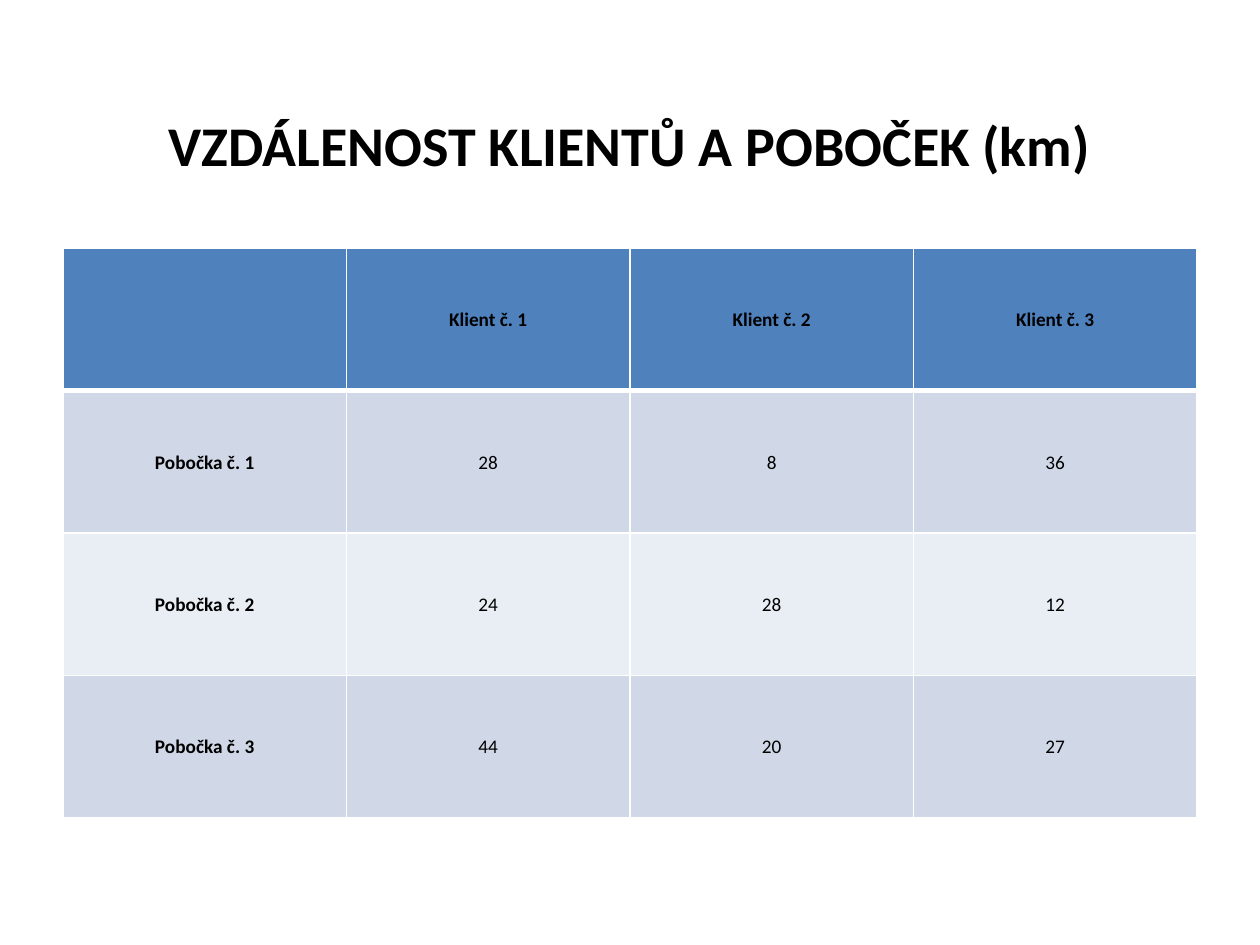
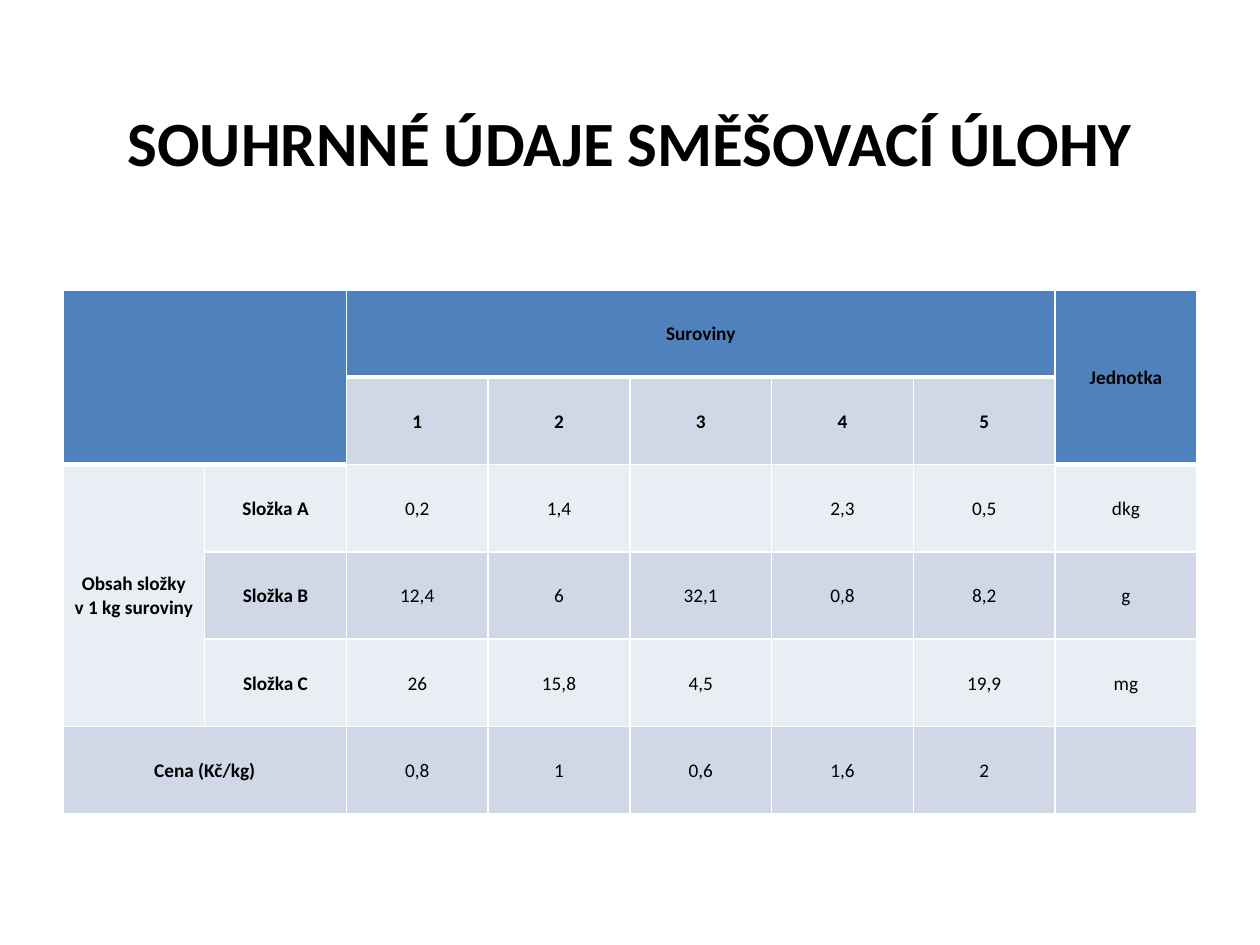
from dataclasses import dataclass

from lxml.etree import SubElement
from pptx import Presentation
from pptx.dml.color import RGBColor as Rgb
from pptx.enum.text import MSO_ANCHOR as Anchor, PP_ALIGN as Align
from pptx.oxml.ns import qn
from pptx.util import Inches, Pt


@dataclass(frozen=True)
class Theme:
    font: str = "Calibri"
    ink: str = "000000"
    line: str = "FFFFFF"
    head: str = "4F81BD"
    bands: tuple = ("E9EDF4", "D0D8E8")
    text: int = 11
    thin: int = 1
    thick: int = 3
    left: float = 0.5
    width: float = 9


class Deck:
    def __init__(self, theme):
        self.theme = theme
        self.prs = Presentation()
        self.prs.slide_width = Inches(10)
        self.prs.slide_height = Inches(7.5)
        self.slide = None

    def page(self):
        self.slide = self.prs.slides.add_slide(self.prs.slide_layouts[6])

    def style(self, para, size, bold):
        para.alignment = Align.CENTER
        font = para.font
        font.name, font.size, font.bold = self.theme.font, Pt(size), bold
        font.color.rgb = Rgb.from_string(self.theme.ink)

    def title(self, text, top, height, size):
        box = self.slide.shapes.add_textbox(
            Inches(self.theme.left), Inches(top),
            Inches(self.theme.width), Inches(height))
        frame = box.text_frame
        frame.word_wrap = True
        frame.vertical_anchor = Anchor.MIDDLE
        frame.text = text
        self.style(frame.paragraphs[0], size, True)

    def edge(self, cell, side, width):
        line = SubElement(cell._tc.get_or_add_tcPr(), qn(f"a:ln{side}"),
                          w=str(Pt(width)))
        fill = SubElement(line, qn("a:solidFill"))
        SubElement(fill, qn("a:srgbClr"), val=self.theme.line)

    def cell(self, cell, text, row, bold):
        """Style a cell; row is where its merged area starts."""
        theme = self.theme
        head = row == 0
        self.edge(cell, "L", theme.thin)
        self.edge(cell, "R", theme.thin)
        if head:
            self.edge(cell, "T", theme.thin)
        self.edge(cell, "B", theme.thick if head else theme.thin)
        cell.fill.solid()
        cell.fill.fore_color.rgb = Rgb.from_string(
            theme.head if head else theme.bands[row % 2])
        cell.vertical_anchor = Anchor.MIDDLE
        cell.margin_left = cell.margin_right = cell.margin_top = Inches(0.01)
        cell.margin_bottom = 0
        cell.text = text
        self.style(cell.text_frame.paragraphs[0], theme.text, bold)

    def table(self, data, top, height, heads=(1, 1), spans=()):
        """heads counts bold rows and columns; spans are (row, col, rows, cols)."""
        rows, cols = len(data), len(data[0])
        grid = self.slide.shapes.add_table(
            rows, cols, Inches(self.theme.left), Inches(top),
            Inches(self.theme.width), Inches(height)).table
        start = {}
        for row, col, tall, wide in spans:
            grid.cell(row, col).merge(grid.cell(row + tall - 1, col + wide - 1))
            for down in range(row, row + tall):
                for over in range(col, col + wide):
                    start[down, over] = row
        for row, line in enumerate(data):
            for col, text in enumerate(line):
                bold = row < heads[0] or col < heads[1]
                self.cell(grid.cell(row, col), text,
                          start.get((row, col), row), bold)


def main():
    deck = Deck(Theme())

    deck.page()
    deck.title("VZDÁLENOST KLIENTŮ A POBOČEK (km)", 0.74, 0.81, 32)
    deck.table([
        ["", "Klient č. 1", "Klient č. 2", "Klient č. 3"],
        ["Pobočka č. 1", "28", "8", "36"],
        ["Pobočka č. 2", "24", "28", "12"],
        ["Pobočka č. 3", "44", "20", "27"],
    ], 1.97, 4.52)

    deck.page()
    deck.title("SOUHRNNÉ ÚDAJE SMĚŠOVACÍ ÚLOHY", 0.7, 0.85, 36)
    deck.table([
        ["", "", "Suroviny", "", "", "", "", "Jednotka"],
        ["", "", "1", "2", "3", "4", "5", ""],
        ["Obsah složky\vv 1 kg suroviny", "Složka A",
         "0,2", "1,4", "", "2,3", "0,5", "dkg"],
        ["", "Složka B", "12,4", "6", "32,1", "0,8", "8,2", "g"],
        ["", "Složka C", "26", "15,8", "4,5", "", "19,9", "mg"],
        ["Cena (Kč/kg)", "", "0,8", "1", "0,6", "1,6", "2", ""],
    ], 2.3, 4.16, heads=(2, 2), spans=[
        (0, 0, 2, 2), (0, 2, 1, 5), (0, 7, 2, 1), (2, 0, 3, 1), (5, 0, 1, 2)])

    deck.prs.save("out.pptx")


if __name__ == "__main__":
    main()
